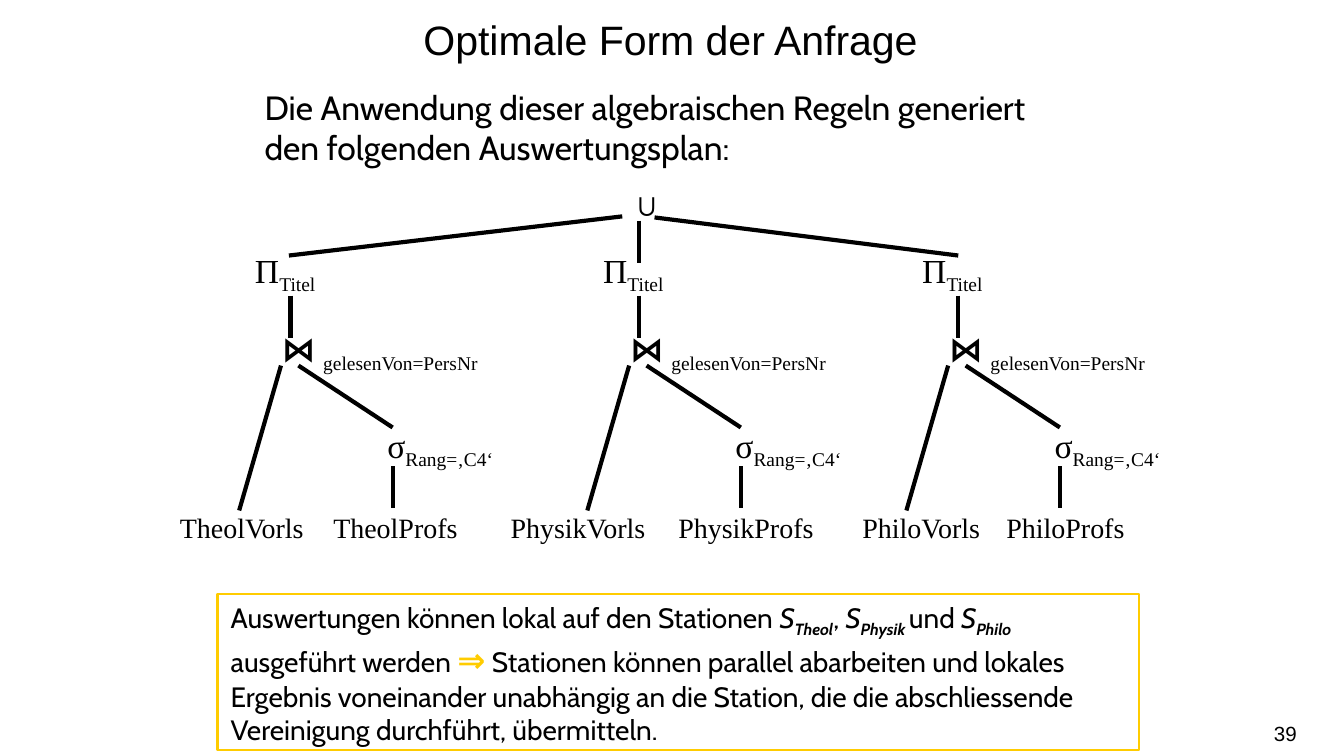
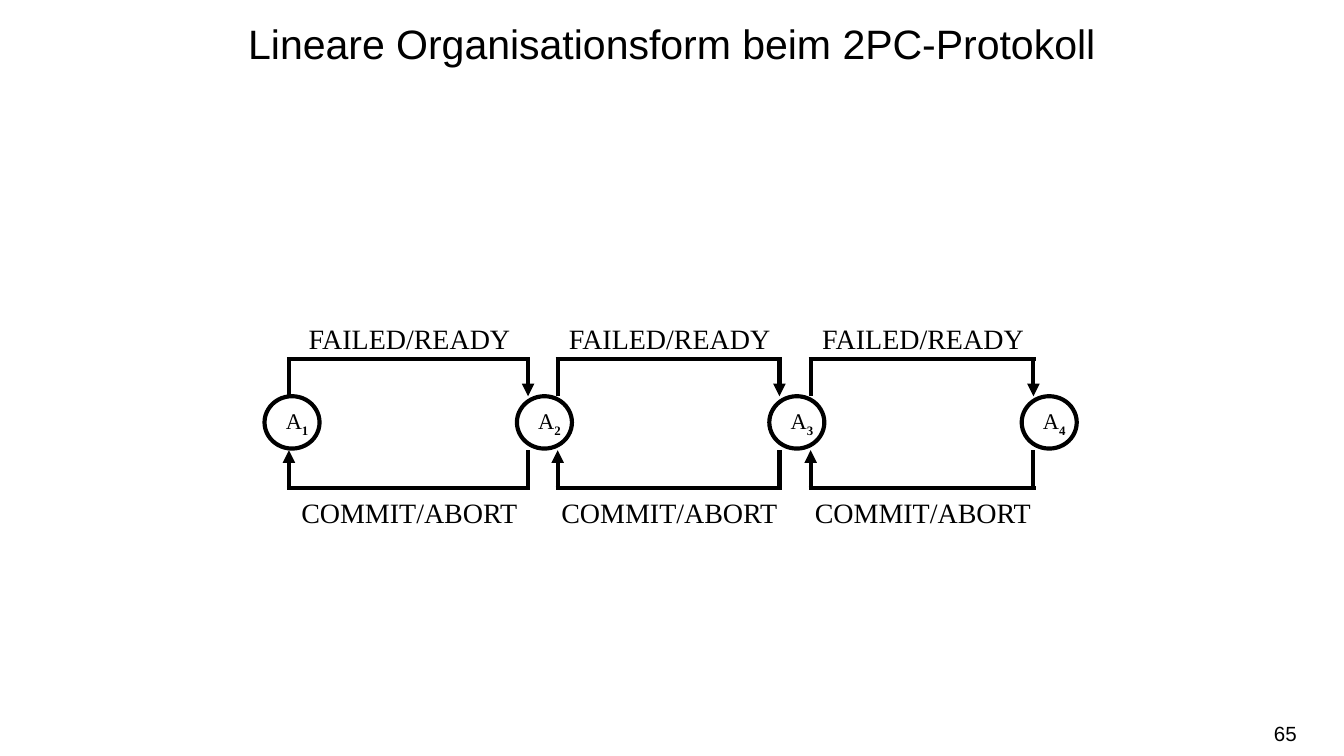
from lxml.etree import SubElement
from pptx import Presentation
from pptx.dml.color import RGBColor
from pptx.enum.shapes import MSO_CONNECTOR, MSO_SHAPE
from pptx.enum.text import MSO_ANCHOR, MSO_AUTO_SIZE, PP_ALIGN
from pptx.oxml.ns import qn
from pptx.util import Cm, Pt

BLACK = RGBColor(0x00, 0x00, 0x00)
YELLOW = RGBColor(0xFF, 0xCC, 0x00)
SANS, BODY, SERIF, SYMBOL = "Arial", "Cabin", "Times New Roman", "Calibri"
LINE_WIDTH = Pt(2.25)


# Shared helpers; all lengths are centimetres
def add_span(para, text, font, size, color=BLACK, bold=False, italic=False, sub=False):
    span = para.add_run()
    span.text = text
    span.font.name = font
    span.font.size = Pt(size)
    span.font.color.rgb = color
    span.font.bold = bold
    span.font.italic = italic
    if sub:
        span._r.get_or_add_rPr().set("baseline", "-25000")


def add_text(page, left, top, width, height, spans, align=PP_ALIGN.LEFT, wrap=False):
    box = page.shapes.add_textbox(Cm(left), Cm(top), Cm(width), Cm(height))
    frame = box.text_frame
    frame.word_wrap = wrap
    para = frame.paragraphs[0]
    para.alignment = align
    for text, font, size, *style in spans:
        add_span(para, text, font, size, **(style[0] if style else {}))
    return box


def add_outline(page, kind, left, top, width, height, color, line_width):
    shape = page.shapes.add_shape(kind, Cm(left), Cm(top), Cm(width), Cm(height))
    shape.shadow.inherit = False
    shape.fill.background()
    shape.line.color.rgb = color
    shape.line.width = line_width
    shape.text_frame.paragraphs[0].alignment = PP_ALIGN.LEFT
    return shape


def add_line(page, start, end, arrow=False):
    """Draw a line; the arrowhead, if any, sits at its start."""
    line = page.shapes.add_connector(
        MSO_CONNECTOR.STRAIGHT, Cm(start[0]), Cm(start[1]), Cm(end[0]), Cm(end[1]))
    line.line.color.rgb = BLACK
    line.line.width = LINE_WIDTH
    if arrow:
        SubElement(line.line._get_or_add_ln(), qn("a:headEnd"), type="triangle")
    SubElement(line._element.spPr, qn("a:effectLst"))


def add_page(deck, title, title_box, number):
    page = deck.slides.add_slide(deck.slide_layouts[6])
    # Title
    heading = add_text(page, *title_box, [(title, SANS, 22)], PP_ALIGN.CENTER, wrap=True)
    heading.text_frame.paragraphs[0].line_spacing = 1.25
    # Page number
    footer = add_text(page, 18.82, 13.49, 5.69, 0.76, [(number, SANS, 11)],
                      PP_ALIGN.RIGHT, wrap=True)
    frame = footer.text_frame
    frame.margin_left = frame.margin_right = 0
    frame.vertical_anchor = MSO_ANCHOR.MIDDLE
    return page


# Query plan
def add_subplan(page, left, top, leaves):
    """Draw one station's operators and its two base relations."""
    sub = {"sub": True}
    operators = [
        (0, 0, 1.78, [("Π", SERIF, 18), ("Titel", SERIF, 18, sub)]),
        (0.51, 1.48, 4.39, [("⋈ ", SYMBOL, 18, {"bold": True}),
                            ("gelesenVon=PersNr", SERIF, 18, sub)]),
        (2.5, 3.3, 2.79, [("σ", SERIF, 18), ("Rang=‚C4‘", SERIF, 18, sub)]),
    ]
    for x, y, width, spans in operators:
        add_text(page, left + x, top + y, width, 1.02, spans)
    for name, x, width in leaves:
        add_text(page, left + x, top + 4.93, width, 0.89, [(name, SERIF, 15)])
    edges = [
        ((0.92, 0.99), (0.92, 1.78)),
        ((0.74, 2.31), (-0.05, 5.05)),
        ((1.07, 2.31), (2.85, 3.48)),
        ((2.85, 4.21), (2.85, 5.0)),
    ]
    for start, end in edges:
        add_line(page, (left + start[0], top + start[1]), (left + end[0], top + end[1]))


def add_plan(page, left, top):
    """Draw the union and the three subplans below it."""
    add_text(page, left + 7.09, top, 1.02, 1.02, [("∪", SERIF, 18)])
    branches = [((7.19, 0.76), (0.89, 1.5)),
                ((7.5, 0.84), (7.5, 1.65)),
                ((7.8, 0.78), (13.54, 1.5))]
    for start, end in branches:
        add_line(page, (left + start[0], top + start[1]), (left + end[0], top + end[1]))
    subplans = [
        (0, [("TheolVorls", -1.42, 2.87), ("TheolProfs", 1.48, 2.9)]),
        (6.58, [("PhysikVorls", -1.75, 3.1), ("PhysikProfs", 1.42, 3.1)]),
        (12.61, [("PhiloVorls", -1.13, 2.77), ("PhiloProfs", 1.59, 2.77)]),
    ]
    for x, leaves in subplans:
        add_subplan(page, left + x, top + 1.27, leaves)


def add_conclusion(page, left, top, width, height):
    box = add_outline(page, MSO_SHAPE.RECTANGLE, left, top, width, height, YELLOW, Pt(1.25))
    frame = box.text_frame
    frame.word_wrap = True
    frame.auto_size = MSO_AUTO_SIZE.SHAPE_TO_FIT_TEXT
    frame.vertical_anchor = MSO_ANCHOR.TOP
    para = frame.paragraphs[0]
    add_span(para, "Auswertungen können lokal auf den Stationen ", BODY, 15)
    for station, joiner in [("Theol", ", "), ("Physik ", "und "),
                            ("Philo", " ausgeführt werden ")]:
        add_span(para, "S", BODY, 15, italic=True)
        add_span(para, station, BODY, 15, bold=True, italic=True, sub=True)
        add_span(para, joiner, BODY, 15)
    add_span(para, "⇒", BODY, 18, YELLOW, bold=True)
    add_span(para, " ", BODY, 15, YELLOW, bold=True)
    add_span(para, "Stationen können parallel abarbeiten und lokales Ergebnis "
                   "voneinander unabhängig an die Station, die die abschliessende "
                   "Vereinigung durchführt, übermitteln.", BODY, 15)


def add_query_page(deck):
    page = add_page(deck, "Optimale Form der Anfrage", (4.57, -0.08, 16.21, 1.5), "39")
    add_text(page, 4.75, 1.52, 15.6, 1.8,
             [("Die Anwendung dieser algebraischen Regeln generiert "
               "den folgenden Auswertungsplan:", BODY, 18)], wrap=True)
    add_plan(page, 4.57, 3.33)
    add_conclusion(page, 4.11, 11.23, 17.42, 2.95)


# Linear commit chain
def add_agent(page, left, top, index):
    ring = add_outline(page, MSO_SHAPE.OVAL, left, top, 1.04, 0.99, BLACK, LINE_WIDTH)
    frame = ring.text_frame
    frame.word_wrap = False
    frame.vertical_anchor = MSO_ANCHOR.MIDDLE
    para = frame.paragraphs[0]
    add_span(para, "A", SERIF, 12)
    add_span(para, str(index), SERIF, 12, bold=True, sub=True)


def add_bracket(page, left, right, bar, tip, arrow_left):
    """Join two agents by a bar with a leg at each end, one with an arrowhead."""
    overlap = 0.04
    add_line(page, (left - overlap, bar), (right + overlap, bar))
    add_line(page, (left, tip), (left, bar), arrow=arrow_left)
    add_line(page, (right, tip), (right, bar), arrow=not arrow_left)


def add_chain(page, left, top):
    pitch = 4.77
    for index in range(4):
        add_agent(page, left + index * pitch, top, index + 1)
    for start, end in [(0.46, 4.98), (5.54, 9.73), (10.32, 14.53)]:
        start, end = left + start, left + end
        add_bracket(page, start, end, top - 0.71, top, arrow_left=False)
        add_bracket(page, start, end, top + 1.73, top + 1.02, arrow_left=True)
        center = (start + end) / 2 + 0.05
        for label, width, y in [("FAILED/READY", 4.37, -1.53), ("COMMIT/ABORT", 4.65, 1.75)]:
            add_text(page, center - width / 2, top + y, width, 0.89, [(label, SERIF, 15)])


def add_protocol_page(deck):
    page = add_page(deck, "Lineare Organisationsform beim 2PC-Protokoll",
                    (0, 0, 25.4, 2.39), "65")
    add_chain(page, 5.0, 7.49)


def main():
    deck = Presentation()
    deck.slide_width, deck.slide_height = Cm(25.4), Cm(14.29)
    add_query_page(deck)
    add_protocol_page(deck)
    deck.save("out.pptx")


if __name__ == "__main__":
    main()
